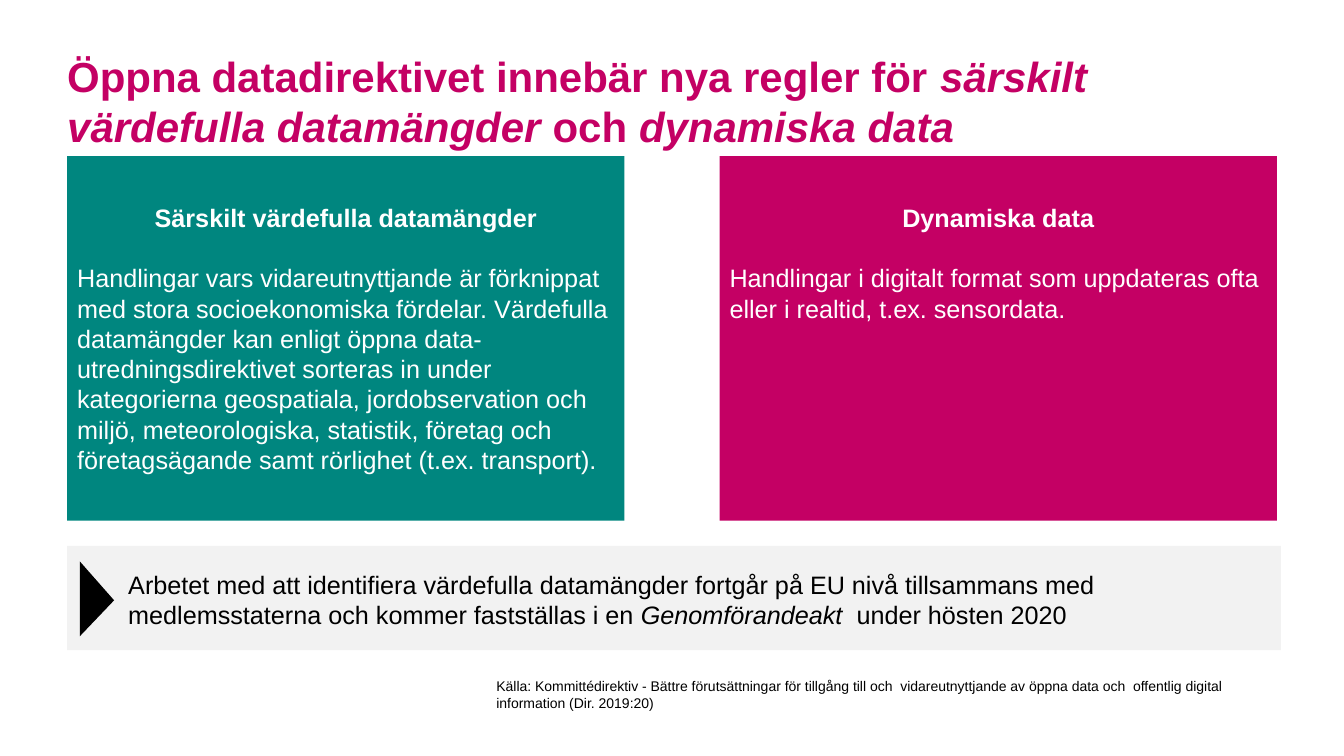
"""Builds a slide on the rules for high-value datasets and dynamic data."""
import dataclasses

import pptx
import pptx.dml.color
import pptx.enum.shapes
import pptx.enum.text
import pptx.util

Pt = pptx.util.Pt
Shape = pptx.enum.shapes.MSO_SHAPE
Align = pptx.enum.text.PP_ALIGN
Anchor = pptx.enum.text.MSO_ANCHOR
AutoSize = pptx.enum.text.MSO_AUTO_SIZE


@dataclasses.dataclass(frozen=True)
class Theme:
    font: str = "Arial"
    magenta: str = "C40064"
    teal: str = "00867F"
    grey: str = "F2F2F2"
    black: str = "000000"
    white: str = "FFFFFF"
    title_size: float = 30
    body_size: float = 18
    source_size: float = 10


class SlideBuilder:
    def __init__(self, slide, theme):
        self.slide = slide
        self.theme = theme

    def add_runs(self, paragraph, runs, size, color, bold=False):
        for wording, italic in runs:
            run = paragraph.add_run()
            run.text = wording
            run.font.name = self.theme.font
            run.font.size = Pt(size)
            run.font.bold = bold
            run.font.italic = italic
            run.font.color.rgb = pptx.dml.color.RGBColor.from_string(color)

    def title(self, box, runs):
        heading = self.slide.shapes.title
        heading.left, heading.top, heading.width, heading.height = map(Pt, box)
        frame = heading.text_frame
        frame.margin_left = frame.margin_top = frame.margin_right = frame.margin_bottom = 0
        frame.vertical_anchor = Anchor.TOP
        frame.word_wrap = True
        frame.auto_size = AutoSize.NONE
        frame.paragraphs[0].alignment = Align.LEFT
        self.add_runs(frame.paragraphs[0], runs, self.theme.title_size, self.theme.magenta, bold=True)

    def block(self, box, color, preset=Shape.RECTANGLE, rotation=0):
        block = self.slide.shapes.add_shape(preset, *map(Pt, box))
        block.shadow.inherit = False
        block.fill.solid()
        block.fill.fore_color.rgb = pptx.dml.color.RGBColor.from_string(color)
        block.line.fill.background()
        block.rotation = rotation
        return block

    def panel(self, box, color, heading, description):
        frame = self.block(box, color).text_frame
        frame.word_wrap = True
        frame.vertical_anchor = Anchor.TOP
        frame.margin_top = Pt(33)
        size, white = self.theme.body_size, self.theme.white
        first = frame.paragraphs[0]
        first.alignment = Align.CENTER
        first.space_after = Pt(1.2 * size)
        self.add_runs(first, [(heading, False)], size, white, bold=True)
        second = frame.add_paragraph()
        second.alignment = Align.LEFT
        self.add_runs(second, [(description, False)], size, white)

    def text(self, box, runs, size, anchor=Anchor.TOP):
        frame = self.slide.shapes.add_textbox(*map(Pt, box)).text_frame
        frame.word_wrap = True
        frame.vertical_anchor = anchor
        self.add_runs(frame.paragraphs[0], runs, size, self.theme.black)


def main():
    presentation = pptx.Presentation()
    presentation.slide_width, presentation.slide_height = Pt(960), Pt(540)
    theme = Theme()
    builder = SlideBuilder(presentation.slides.add_slide(presentation.slide_layouts[5]), theme)
    left = 48

    builder.title((left, 36, 864, 65.5), [
        ("Öppna datadirektivet innebär nya regler för ", False),
        ("särskilt värdefulla datamängder", True),
        (" och ", False),
        ("dynamiska data", True),
    ])

    panels = [
        (theme.teal, "Särskilt värdefulla datamängder",
         "Handlingar vars vidareutnyttjande är förknippat med stora socioekonomiska "
         "fördelar. Värdefulla datamängder kan enligt öppna data-utredningsdirektivet "
         "sorteras in under kategorierna geospatiala, jordobservation och miljö, "
         "meteorologiska, statistik, företag och företagsägande samt rörlighet "
         "(t.ex. transport)."),
        (theme.magenta, "Dynamiska data",
         "Handlingar i digitalt format som uppdateras ofta eller i realtid, "
         "t.ex. sensordata."),
    ]
    panel_width, panel_gap = 398, 68
    for index, (color, heading, description) in enumerate(panels):
        x = left + index * (panel_width + panel_gap)
        builder.panel((x, 111.5, panel_width, 260.5), color, heading, description)

    builder.block((left, 390, 867, 74.5), theme.grey)
    builder.text((84.5, 403, 826.5, 51), [
        ("Arbetet med att identifiera värdefulla datamängder fortgår på EU nivå "
         "tillsammans med medlemsstaterna och kommer fastställas i en ", False),
        ("Genomförandeakt ", True),
        (" under hösten 2020", False),
    ], theme.body_size)
    marker = builder.block((42.5, 415.5, 53.5, 24.5), theme.black, Shape.ISOSCELES_TRIANGLE, 90)
    marker.adjustments[0] = 0.52

    builder.text((347.5, 478, 564.5, 36), [
        ("Källa: Kommittédirektiv - Bättre förutsättningar för tillgång till och  "
         "vidareutnyttjande av öppna data och  offentlig digital information "
         "(Dir. 2019:20)", False),
    ], theme.source_size, Anchor.MIDDLE)

    presentation.save("out.pptx")


if __name__ == "__main__":
    main()
